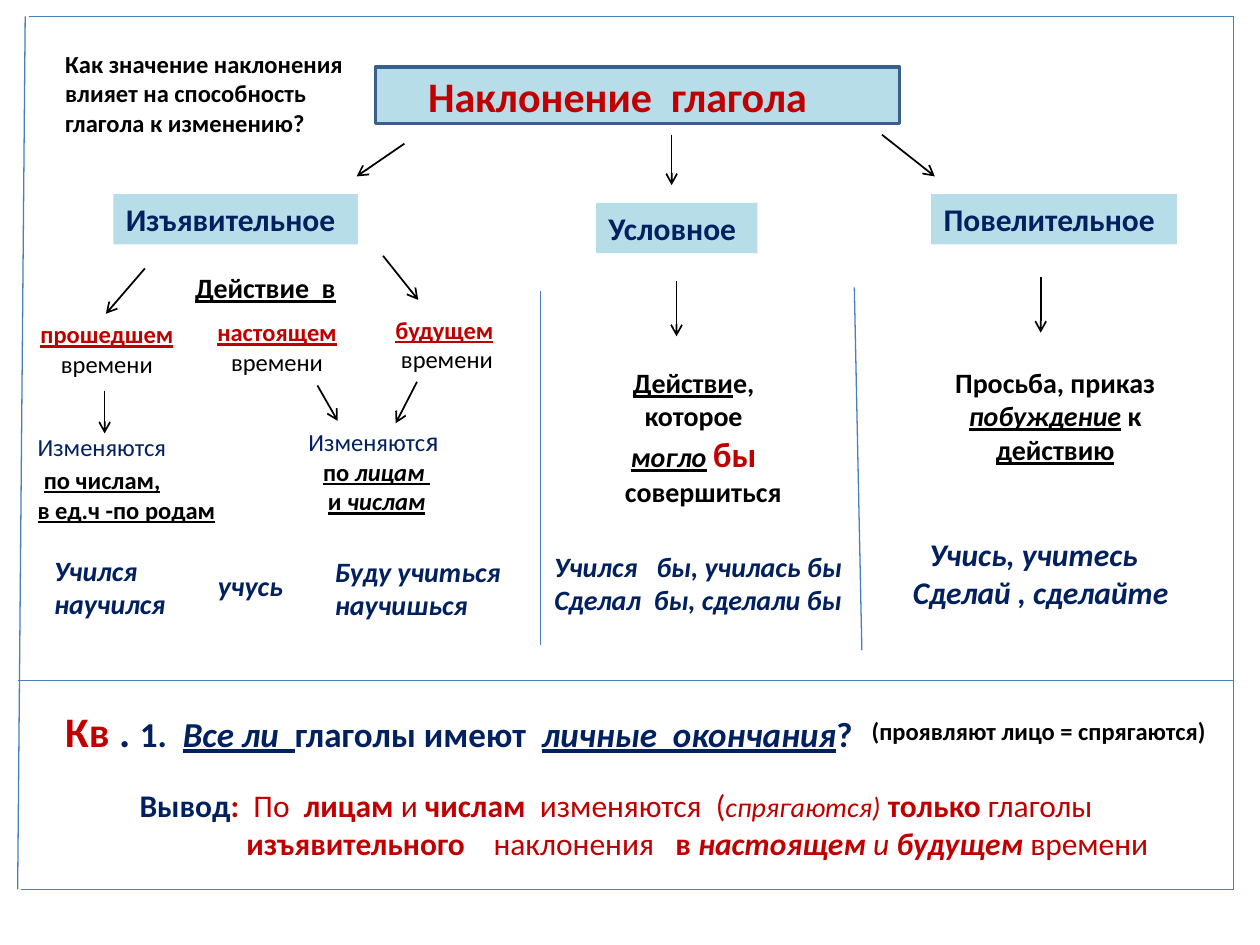
"""Build a one-slide diagram of the moods of the Russian verb."""
from pptx import Presentation
from pptx import util as u
from pptx.dml.color import RGBColor
from pptx.enum import shapes, text
from pptx.oxml import parse_xml
from pptx.oxml.ns import nsdecls, qn

BLACK = RGBColor(0x00, 0x00, 0x00)
RED = RGBColor(0xC0, 0x00, 0x00)
NAVY = RGBColor(0x00, 0x20, 0x60)
PALE_BLUE = RGBColor(0xB7, 0xDE, 0xE8)
TITLE_EDGE = RGBColor(0x3A, 0x5F, 0x8C)
FRAME_BLUE = RGBColor(0x4B, 0x7E, 0xBC)
COLOURS = {"k": BLACK, "r": RED, "n": NAVY}
FONT = "Calibri"

TITLE = "Наклонение  глагола"
TITLE_BOX = (214.6, 38.2, 299.5, 32.4)

# Flags: k black, r red, n navy; b bold, i italic, u underlined.
MOODS = [
    ("Изъявительное", (64.8, 110.9, 139.7, 28.8)),
    ("Условное", (340.6, 115.9, 92.2, 28.8)),
    ("Повелительное", (532.1, 110.9, 140.4, 28.8)),
]
TENSES = [
    ("прошедшем", "времени", (15.8, 178.9, 90.7, 41.2), True),
    ("настоящем", "времени", (116.6, 177.8, 83.5, 41.2), True),
    ("будущем", " времени", (218.9, 176.4, 70.6, 41.2), False),
]
EXAMPLES = [
    (["Учился", "научился"], (23.8, 312.5, 86.4, 46), 16, False),
    (["учусь"], (117.4, 321.1, 52.6, 26.6), 16, False),
    (["Буду учиться", "научишься"], (184.3, 313.2, 110.9, 46), 16, False),
    (["Учился   бы, училась бы", "Сделал  бы, сделали бы"],
     (308.2, 310.3, 181.4, 46), 16, True),
    (["Учись, учитесь  ", "Сделай , сделайте"],
     (513.4, 302.4, 162.7, 51.1), 18, True),
]
NOTES = [
    (["Как значение наклонения", "влияет на способность", "глагола к изменению?"],
     (30.2, 24.5, 173.5, 58.3), dict(size=14, flags="kb")),
    (["Действие  в"], (104.4, 151.2, 95.8, 26.6), dict(size=16, flags="kbu")),
    ([[("Изменяютс", "n"), ("я ", "n", 16)],
      [("по ", "kbu"), ("лицам", "kbiu"), (" ", "kbu")],
      [("и ", "kbu"), ("числам", "kbiu")]],
     (168.5, 238.3, 93.6, 60.5), dict(size=14, centred=True)),
    ([[("Изменяются", "n")],
      [(" ", "nb", 16), ("по числам,", "kbu")],
      [("в ед.ч -по родам", "kbu")]],
     (14.4, 243.4, 115.9, 60.5), dict(size=14)),
    ([[("Действи", "kbu"), ("е,", "kb")], "которое",
      [("могло", "kbiu"), (" ", "kb"), ("бы", "rb", 20)], "совершиться"],
     (338.4, 205.2, 115.9, 89.3),
     dict(size=16, flags="kb", centred=True, indents={3: 11})),
    (["Просьба, приказ", [("побуждение", "kbiu"), (" к", "kb")], [("действию", "kbu")]],
     (537.8, 205.2, 130.3, 65.5), dict(size=16, flags="kb", centred=True)),
    ([[("Кв", "rb", 24), (" . ", "nb", 24), ("1.  ", "nb"), ("Все ли  ", "nbiu"),
       ("глаголы имеют  ", "nb"), ("личные  окончания", "nbiu"), ("?", "nb")]],
     (30.2, 399.6, 467.3, 36), dict(size=20)),
    (["(проявляют лицо = спрягаются)"], (491, 405.4, 207.4, 24.5),
     dict(size=14, flags="kb")),
    ([[("Вывод", "nb"), (":  ", "rb"), ("По ", "r"), (" лицам ", "rb"), ("и", "r"),
       (" числам  ", "rb"), ("изменяются  (", "r"), ("спрягаются)", "ri", 16),
       (" ", "r"), ("только ", "rb"), ("глаголы", "r")],
      [("изъявительного    ", "rb"), ("наклонения", "r"), ("   в ", "rb"),
       ("настоящем ", "rbi"), ("и", "ri"), (" будущем ", "rbi"), ("времени", "r")]],
     (72.7, 445.7, 598.3, 51.1), dict(size=18, indents={1: 61})),
]
ARROWS = [
    (231.1, 82.1, 203.8, 100.8), (383.8, 77, 383.8, 105.8), (504, 77, 534.2, 100.8),
    (82.8, 153.4, 60.5, 179.3), (218.9, 146.2, 239, 171.4),
    (386.6, 160.6, 386.6, 192.2), (594.7, 158.4, 594.7, 190.1),
    (59.8, 223.2, 59.8, 247.7), (181.4, 220.3, 193, 240.5), (238.3, 218.2, 226.1, 241.9),
]
RULES = [
    (16.6, 9.4, 704.9, 9.4), (12.2, 508.3, 704.9, 508.3),
    (10.1, 508.3, 14.4, 9.4), (704.9, 508.3, 704.9, 9.4),
    (10.1, 388.8, 704.9, 388.8),
    (308.9, 368.6, 308.9, 166.3), (492.5, 371.5, 488.2, 164.2),
]


def points(values):
    return [u.Pt(value) for value in values]


def write_text(frame, paragraphs, size=16, flags="k", centred=False, indents=None):
    frame.auto_size = text.MSO_AUTO_SIZE.NONE
    for index, content in enumerate(paragraphs):
        paragraph = frame.paragraphs[0] if index == 0 else frame.add_paragraph()
        paragraph.alignment = text.PP_ALIGN.CENTER if centred else text.PP_ALIGN.LEFT
        if indents and index in indents:
            paragraph._p.get_or_add_pPr().set("marL", str(u.Pt(indents[index])))
        runs = [(content, flags)] if isinstance(content, str) else content
        for words, style, *own_size in runs:
            run = paragraph.add_run()
            run.text = words
            run.font.name = FONT
            run.font.size = u.Pt(own_size[0] if own_size else size)
            run.font.color.rgb = COLOURS[style[0]]
            run.font.bold = "b" in style
            run.font.italic = "i" in style
            run.font.underline = "u" in style


def add_text(slide, paragraphs, box, fill=None, **text_format):
    shape = slide.shapes.add_textbox(*points(box))
    shape.text_frame.word_wrap = False
    if fill is not None:
        shape.fill.solid()
        shape.fill.fore_color.rgb = fill
    write_text(shape.text_frame, paragraphs, **text_format)


def add_line(slide, ends, colour, width, arrow=False):
    connector = slide.shapes.add_connector(shapes.MSO_CONNECTOR.STRAIGHT, *points(ends))
    connector.line.color.rgb = colour
    connector.line.width = u.Pt(width)
    if arrow:
        connector.line._get_or_add_ln().append(
            parse_xml(f'<a:tailEnd {nsdecls("a")} type="arrow"/>'))
    connector._element.spPr.append(parse_xml(f'<a:effectLst {nsdecls("a")}/>'))


def format_title(title):
    title.left, title.top, title.width, title.height = points(TITLE_BOX)
    title._element.spPr.find(qn("a:xfrm")).addnext(
        parse_xml(f'<a:prstGeom {nsdecls("a")} prst="roundRect"><a:avLst/></a:prstGeom>'))
    title.fill.solid()
    title.fill.fore_color.rgb = PALE_BLUE
    title.line.color.rgb = TITLE_EDGE
    title.line.width = u.Pt(2)
    frame = title.text_frame
    frame.margin_left = u.Pt(30)
    frame.vertical_anchor = text.MSO_ANCHOR.MIDDLE
    write_text(frame, [TITLE], size=24, flags="rb")


def main():
    presentation = Presentation()
    presentation.slide_width, presentation.slide_height = points((720, 540))
    slide = presentation.slides.add_slide(presentation.slide_layouts[5])
    format_title(slide.shapes.title)
    for ends in RULES:
        add_line(slide, ends, FRAME_BLUE, 0.75)
    for ends in ARROWS:
        add_line(slide, ends, BLACK, 1, arrow=True)
    for mood, box in MOODS:
        add_text(slide, [mood], box, fill=PALE_BLUE, size=18, flags="nb")
    for tense, noun, box, centred in TENSES:
        add_text(slide, [[(tense, "rbu")], noun], box, size=14, centred=centred)
    for lines, box, size, centred in EXAMPLES:
        add_text(slide, lines, box, size=size, flags="nbi", centred=centred)
    for paragraphs, box, text_format in NOTES:
        add_text(slide, paragraphs, box, **text_format)
    presentation.save("out.pptx")


if __name__ == "__main__":
    main()
